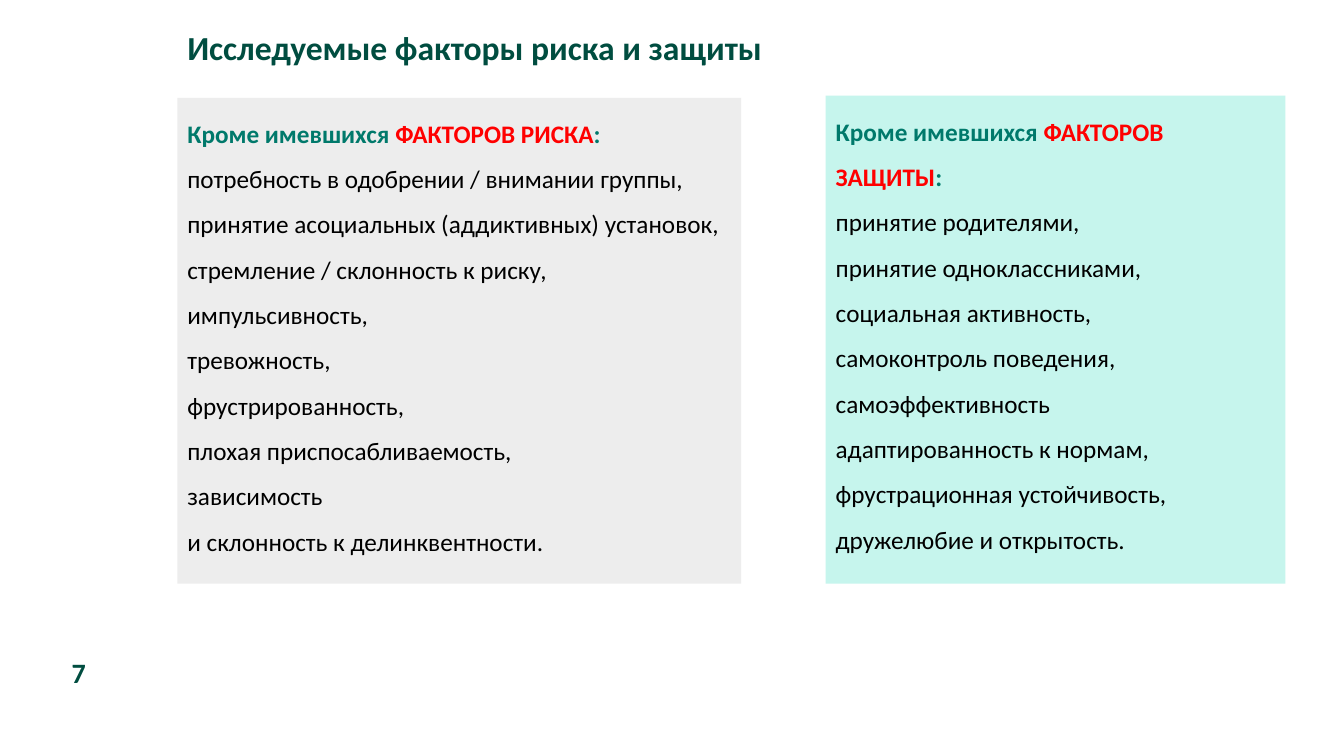
"""Build the slide on the studied risk and protection factors."""
from pptx import Presentation
from pptx.dml.color import RGBColor
from pptx.enum.shapes import MSO_SHAPE as SHAPE
from pptx.enum.text import MSO_ANCHOR as ANCHOR, PP_ALIGN as ALIGN
from pptx.util import Emu, Pt

PX = 9144
FONT = "Calibri"
COLORS = {
    "dark": "004D40",
    "teal": "00796B",
    "red": "FF0000",
    "black": "000000",
    "gray": "EDEDED",
    "mint": "C6F5ED",
}
RISKS = [
    "потребность в одобрении / внимании группы,",
    "принятие асоциальных (аддиктивных) установок,",
    "стремление / склонность к риску,",
    "импульсивность,",
    "тревожность,",
    "фрустрированность,",
    "плохая приспосабливаемость,",
    "зависимость",
    "и склонность к делинквентности.",
]
PROTECTIONS = [
    "принятие родителями,",
    "принятие одноклассниками,",
    "социальная активность,",
    "самоконтроль поведения,",
    "самоэффективность",
    "адаптированность к нормам,",
    "фрустрационная устойчивость,",
    "дружелюбие и открытость.",
]


def px(*values):
    """Turn whole pixels into EMU lengths."""
    return [Emu(v * PX) for v in values]


def rgb(name):
    """Look up a named colour."""
    return RGBColor.from_string(COLORS[name])


def add_run(p, text, size, color, bold=False):
    """Append one formatted run to a paragraph."""
    r = p.add_run()
    r.text = text
    r.font.name = FONT
    r.font.size = Pt(size)
    r.font.bold = bold
    r.font.color.rgb = rgb(color)


def add_label(s, box, text, size, inset, anchor):
    """Add a bold one-line text box with the given side and top insets."""
    tf = s.shapes.add_textbox(*px(*box)).text_frame
    tf.word_wrap = True
    tf.vertical_anchor = anchor
    tf.margin_left, tf.margin_top = px(*inset)
    tf.margin_right, tf.margin_bottom = px(0, inset[1])
    p = tf.paragraphs[0]
    p.line_spacing = 0.9 if anchor == ANCHOR.MIDDLE else 1.0
    add_run(p, text, size, "dark", True)


def add_panel(s, box, fill, heading, factors):
    """Add a filled panel with a two-colour heading and its factors."""
    sp = s.shapes.add_shape(SHAPE.RECTANGLE, *px(*box))
    sp.shadow.inherit = False
    sp.fill.solid()
    sp.fill.fore_color.rgb = rgb(fill)
    sp.line.fill.background()
    tf = sp.text_frame
    tf.word_wrap = True
    tf.vertical_anchor = ANCHOR.TOP
    p = tf.paragraphs[0]
    add_run(p, "Кроме имевшихся ", 18, "teal", True)
    add_run(p, heading, 18, "red", True)
    add_run(p, ":", 18, "teal", True)
    for factor in factors:
        add_run(tf.add_paragraph(), factor, 18, "black")
    for p in tf.paragraphs:
        p.alignment = ALIGN.LEFT
        p.line_spacing = 1.5


def main():
    """Build and save the slide."""
    prs = Presentation()
    prs.slide_width, prs.slide_height = px(1333, 750)
    s = prs.slides.add_slide(prs.slide_layouts[6])
    add_label(s, (176, 7, 596, 85), "Исследуемые факторы риска и защиты",
              24, (10, 5), ANCHOR.MIDDLE)
    add_panel(s, (176, 97, 559, 482), "gray", "ФАКТОРОВ РИСКА", RISKS)
    add_panel(s, (819, 95, 456, 484), "mint", "ФАКТОРОВ ЗАЩИТЫ", PROTECTIONS)
    add_label(s, (67, 650, 42, 34), "7", 20, (4, 0), ANCHOR.TOP)
    prs.save("out.pptx")


if __name__ == "__main__":
    main()
